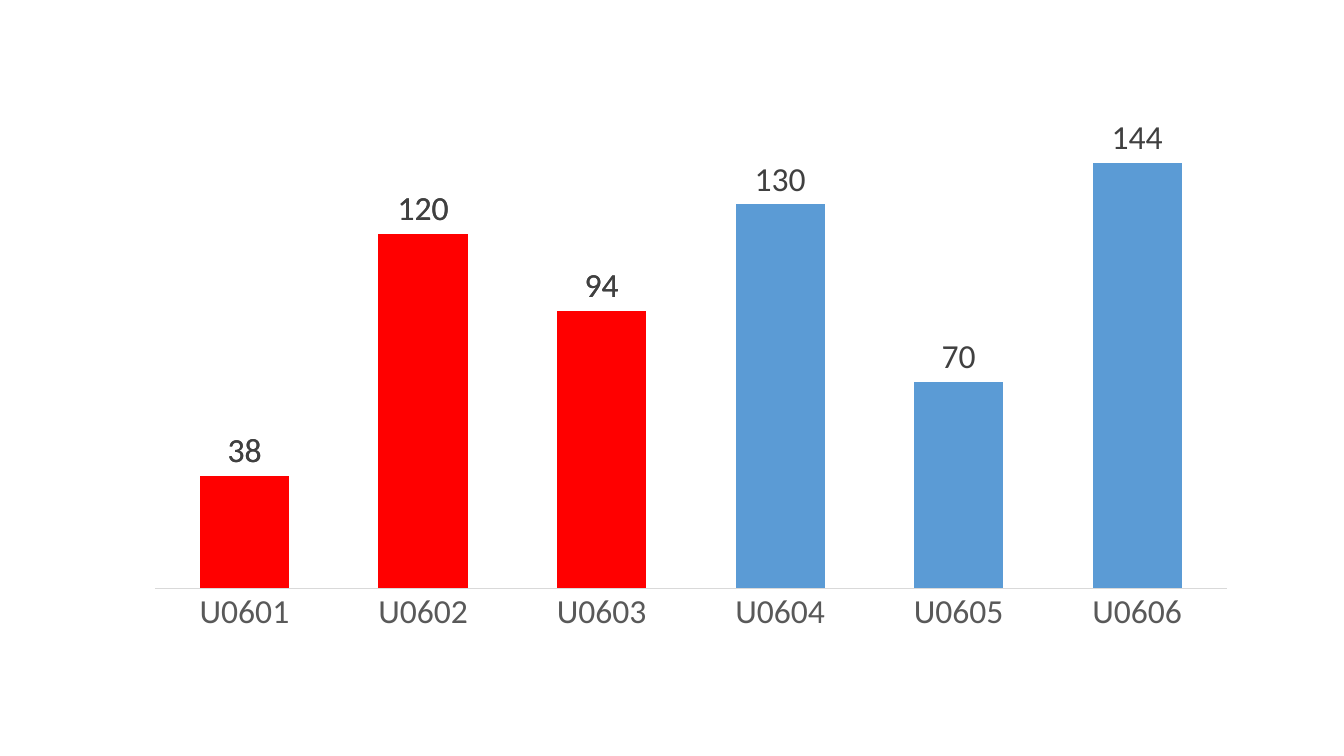
from pptx import Presentation, util as u
from pptx.chart import data as chart_data
from pptx.dml.color import RGBColor
from pptx.enum import chart as ch
from pptx.oxml import parse_xml
from pptx.oxml.ns import nsdecls, qn

COLORS = {"blue": "5B9BD5", "red": "FF0000", "axis": "D9D9D9",
          "category": "595959", "value": "404040"}
PLOT_AREA = {"x": 0.061, "y": 0.042, "w": 0.939, "h": 0.821}


def format_text(text, size=24, color="category", face="Calibri"):
    text.font.size = u.Pt(size)
    text.font.name = face
    text.font.color.rgb = RGBColor.from_string(COLORS[color])


prs = Presentation()
prs.slide_width, prs.slide_height = u.Inches(13.33), u.Inches(7.5)
slide = prs.slides.add_slide(prs.slide_layouts[6])

# Unit counts, with the first three units overlaid in red
counts = [38, 120, 94, 130, 70, 144]
units = chart_data.CategoryChartData()
units.categories = [f"U060{n}" for n in range(1, 7)]
units.add_series("Series 1", counts)
units.add_series("Series 2", counts[:3] + [None] * 3)
chart = slide.shapes.add_chart(
    ch.XL_CHART_TYPE.COLUMN_CLUSTERED, u.Inches(0.85), u.Inches(0.91),
    u.Inches(11.32), u.Inches(5.71), units).chart
chart.has_title = False
chart.has_legend = False
format_text(chart)

# Columns and their labels
columns = chart.plots[0]
columns.gap_width = 100
columns.overlap = 100
columns.vary_by_categories = False
for series, color in zip(columns.series, ("blue", "red")):
    series.format.fill.solid()
    series.format.fill.fore_color.rgb = RGBColor.from_string(COLORS[color])
    series.invert_if_negative = False
    labels = series.data_labels
    labels.show_value = True
    labels.position = ch.XL_LABEL_POSITION.OUTSIDE_END
    format_text(labels, color="value")

# Axes
unit_axis = chart.category_axis
unit_axis.major_tick_mark = ch.XL_TICK_MARK.NONE
unit_axis.format.line.color.rgb = RGBColor.from_string(COLORS["axis"])
unit_axis.format.line.width = u.Pt(0.75)
format_text(unit_axis.tick_labels)
count_axis = chart.value_axis
count_axis.minimum_scale, count_axis.maximum_scale = 0, 160
count_axis.has_major_gridlines = False
count_axis.visible = False

# Fixed inner plot area
plot_area = chart.element.find(".//" + qn("c:plotArea"))
for automatic in plot_area.findall(qn("c:layout")):
    plot_area.remove(automatic)
modes = "".join(f'<c:{side}Mode val="edge"/>' for side in "xy")
sizes = "".join(f'<c:{side} val="{share}"/>' for side, share in PLOT_AREA.items())
plot_area.insert(0, parse_xml(
    f'<c:layout {nsdecls("c")}><c:manualLayout><c:layoutTarget val="inner"/>'
    f"{modes}{sizes}</c:manualLayout></c:layout>"))

prs.save("out.pptx")
